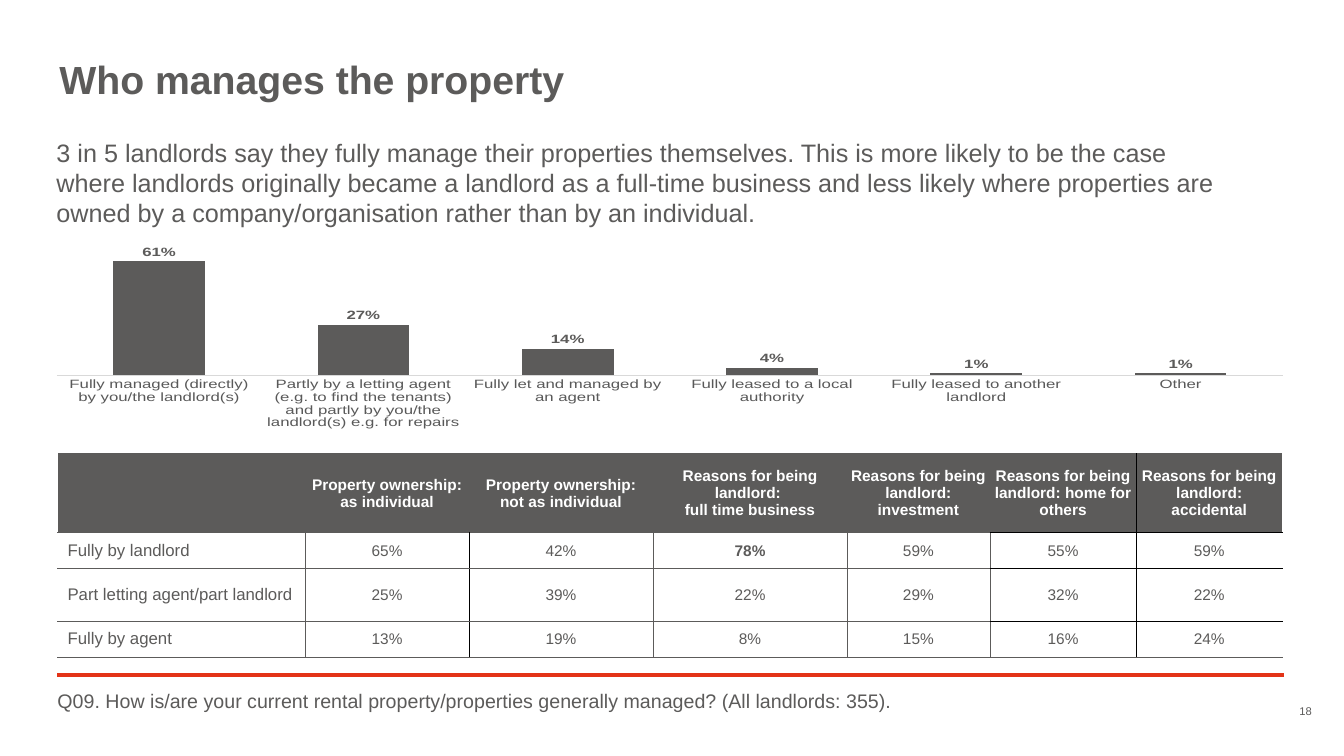
from dataclasses import dataclass

from lxml import etree
from pptx import Presentation
from pptx.chart.data import CategoryChartData
from pptx.dml.color import RGBColor
from pptx.enum.chart import XL_CHART_TYPE, XL_LABEL_POSITION, XL_TICK_MARK
from pptx.enum.shapes import MSO_CONNECTOR
from pptx.enum.text import MSO_ANCHOR, PP_ALIGN
from pptx.oxml import parse_xml
from pptx.oxml.ns import nsdecls, qn
from pptx.slide import Slide
from pptx.table import _Cell
from pptx.text.text import Font, TextFrame
from pptx.util import Pt

PX = 9144  # EMU; 100 px to the inch
FONT = "Arial"
GREY = RGBColor(0x5C, 0x5B, 0x5A)
AXIS_TEXT = RGBColor(0x59, 0x59, 0x59)
AXIS_LINE = RGBColor(0xD9, 0xD9, 0xD9)
RED = RGBColor(0xE3, 0x33, 0x17)
WHITE = RGBColor(0xFF, 0xFF, 0xFF)
BLACK = RGBColor(0x00, 0x00, 0x00)
LEFT, RIGHT, CENTER = PP_ALIGN.LEFT, PP_ALIGN.RIGHT, PP_ALIGN.CENTER
TOP, MIDDLE, BOTTOM = MSO_ANCHOR.TOP, MSO_ANCHOR.MIDDLE, MSO_ANCHOR.BOTTOM


@dataclass(frozen=True)
class Label:
    text: str
    left: int
    top: int
    width: int
    height: int
    size: int
    bold: bool = False
    align: PP_ALIGN = LEFT
    anchor: MSO_ANCHOR = TOP
    spacing: float = 1.0


@dataclass(frozen=True)
class Border:
    color: RGBColor
    width: float


GREY_EDGE = Border(GREY, 0.5)
WHITE_EDGE = Border(WHITE, 0.5)
BLACK_EDGE = Border(BLACK, 0.25)

LABELS = [
    Label("18", 1262, 699, 39, 13, 8, align=RIGHT, anchor=BOTTOM),
    Label("Who manages the property", 59, 60, 1216, 42, 28, bold=True, spacing=0.9),
    Label("3 in 5 landlords say they fully manage their properties themselves. "
          "This is more likely to be the case where landlords originally became "
          "a landlord as a full-time business and less likely where properties "
          "are owned by a company/organisation rather than by an individual.",
          56, 136, 1151, 91, 18),
    Label("Q09. How is/are your current rental property/properties generally "
          "managed? (All landlords: 355).", 57, 686, 1216, 32, 14, spacing=0.9),
]

MANAGED_BY = {
    "Fully managed (directly) by you/the landlord(s)": 0.61,
    "Partly by a letting agent (e.g. to find the tenants) and partly by "
    "you/the landlord(s) e.g. for repairs": 0.27,
    "Fully let and managed by an agent": 0.14,
    "Fully leased to a local authority": 0.04,
    "Fully leased to another landlord": 0.01,
    "Other": 0.01,
}
PLOT_AREA = {"x": 0, "y": 0.02, "w": 0.97, "h": 0.975}

COL_WIDTHS = [246, 162, 183, 192, 142, 145, 145]
ROW_HEIGHTS = [78, 36, 52, 36]
ROWS = [
    ["", "Property ownership:\nas individual", "Property ownership:\nnot as individual",
     "Reasons for being landlord: \vfull time business",
     "Reasons for being landlord: investment",
     "Reasons for being landlord: home for others",
     "Reasons for being landlord: accidental"],
    ["Fully by landlord", "65%", "42%", "78%", "59%", "55%", "59%"],
    ["Part letting agent/part landlord", "25%", "39%", "22%", "29%", "32%", "22%"],
    ["Fully by agent", "13%", "19%", "8%", "15%", "16%", "24%"],
]
HIGHLIGHT = "78%"


def set_font(font: Font, size: int, color: RGBColor, bold: bool = False) -> None:
    font.name, font.size, font.bold = FONT, Pt(size), bold
    font.color.rgb = color


def write(tf: TextFrame, text: str, *, size: int, color: RGBColor = GREY,
          bold: bool = False, align: PP_ALIGN = LEFT, spacing: float = 1.0) -> None:
    tf.text = text
    for p in tf.paragraphs:
        p.alignment, p.line_spacing = align, spacing
        for r in p.runs:
            set_font(r.font, size, color, bold)


def add_label(s: Slide, label: Label) -> None:
    box = s.shapes.add_textbox(label.left * PX, label.top * PX,
                               label.width * PX, label.height * PX)
    tf = box.text_frame
    tf.word_wrap, tf.vertical_anchor = True, label.anchor
    tf.margin_left = tf.margin_right = tf.margin_top = tf.margin_bottom = 0
    write(tf, label.text, size=label.size, bold=label.bold,
          align=label.align, spacing=label.spacing)


def add_rule(s: Slide) -> None:
    rule = s.shapes.add_connector(MSO_CONNECTOR.STRAIGHT, 57 * PX, 670 * PX,
                                  1273 * PX, 670 * PX)
    rule.line.color.rgb, rule.line.width = RED, Pt(3)
    etree.SubElement(rule.element.spPr, qn("a:effectLst"))


def add_chart(s: Slide) -> None:
    data = CategoryChartData(number_format="0%")
    data.categories = list(MANAGED_BY)
    data.add_series("Series 1", list(MANAGED_BY.values()))
    chart = s.shapes.add_chart(XL_CHART_TYPE.COLUMN_CLUSTERED, 56 * PX, 240 * PX,
                               1254 * PX, 186 * PX, data).chart
    chart.has_legend = chart.has_title = False
    set_font(chart.font, 10, BLACK)

    axis = chart.category_axis
    axis.major_tick_mark = axis.minor_tick_mark = XL_TICK_MARK.NONE
    axis.format.line.color.rgb, axis.format.line.width = AXIS_LINE, Pt(0.75)
    set_font(axis.tick_labels.font, 12, AXIS_TEXT)
    chart.value_axis.visible = chart.value_axis.has_major_gridlines = False
    chart.value_axis.minimum_scale = 0

    plot = chart.plots[0]
    plot.gap_width, plot.overlap, plot.vary_by_categories = 123, -69, False
    fill = plot.series[0].format.fill
    fill.solid()
    fill.fore_color.rgb = GREY
    plot.has_data_labels = True
    labels = plot.data_labels
    labels.show_value, labels.position = True, XL_LABEL_POSITION.OUTSIDE_END
    labels.number_format, labels.number_format_is_linked = "0%", False
    set_font(labels.font, 12, GREY, bold=True)

    area = chart.element.find(".//" + qn("c:plotArea"))
    for old in area.findall(qn("c:layout")):
        area.remove(old)
    sizes = "".join(f'<c:{k} val="{v}"/>' for k, v in PLOT_AREA.items())
    area.insert(0, parse_xml(
        f'<c:layout {nsdecls("c")}><c:manualLayout><c:layoutTarget val="inner"/>'
        f'<c:xMode val="edge"/><c:yMode val="edge"/>{sizes}'
        '</c:manualLayout></c:layout>'))


def vertical_edge(row: int, edge: int) -> Border:
    if edge in (0, len(COL_WIDTHS)):
        return WHITE_EDGE
    return BLACK_EDGE if edge == 6 or (edge == 2 and row > 0) else GREY_EDGE


def horizontal_edge(edge: int, col: int) -> Border:
    inside = 0 < edge < len(ROW_HEIGHTS)
    return BLACK_EDGE if inside and col >= 5 else GREY_EDGE


def set_borders(cell: _Cell, row: int, col: int) -> None:
    borders = {"L": vertical_edge(row, col), "R": vertical_edge(row, col + 1),
               "T": horizontal_edge(row, col), "B": horizontal_edge(row + 1, col)}
    for side, border in borders.items():
        cell._tc.get_or_add_tcPr().append(parse_xml(
            f'<a:ln{side} {nsdecls("a")} w="{Pt(border.width)}"><a:solidFill>'
            f'<a:srgbClr val="{border.color}"/></a:solidFill></a:ln{side}>'))


def fill_cell(cell: _Cell, text: str, row: int, col: int) -> None:
    header = row == 0
    set_borders(cell, row, col)
    if header:
        cell.fill.solid()
        cell.fill.fore_color.rgb = GREY
    else:
        cell.fill.background()
    cell.vertical_anchor = MIDDLE
    if col > 0:
        cell.margin_left = cell.margin_right = cell.margin_top = PX
        cell.margin_bottom = 0
    write(cell.text_frame, text, size=11 if col else 12,
          color=WHITE if header else GREY, bold=header or text == HIGHLIGHT,
          align=CENTER if col else LEFT)


def add_table(s: Slide) -> None:
    table = s.shapes.add_table(len(ROW_HEIGHTS), len(COL_WIDTHS), 57 * PX, 450 * PX,
                               sum(COL_WIDTHS) * PX, sum(ROW_HEIGHTS) * PX).table
    table.first_row = table.horz_banding = False
    for column, width in zip(table.columns, COL_WIDTHS):
        column.width = width * PX
    for i, (height, texts) in enumerate(zip(ROW_HEIGHTS, ROWS)):
        table.rows[i].height = height * PX
        for j, text in enumerate(texts):
            fill_cell(table.cell(i, j), text, i, j)


def main() -> None:
    prs = Presentation()
    prs.slide_width, prs.slide_height = 1333 * PX, 750 * PX
    s = prs.slides.add_slide(prs.slide_layouts[6])
    add_rule(s)
    for label in LABELS:
        add_label(s, label)
    add_chart(s)
    add_table(s)
    prs.save("out.pptx")


if __name__ == "__main__":
    main()
